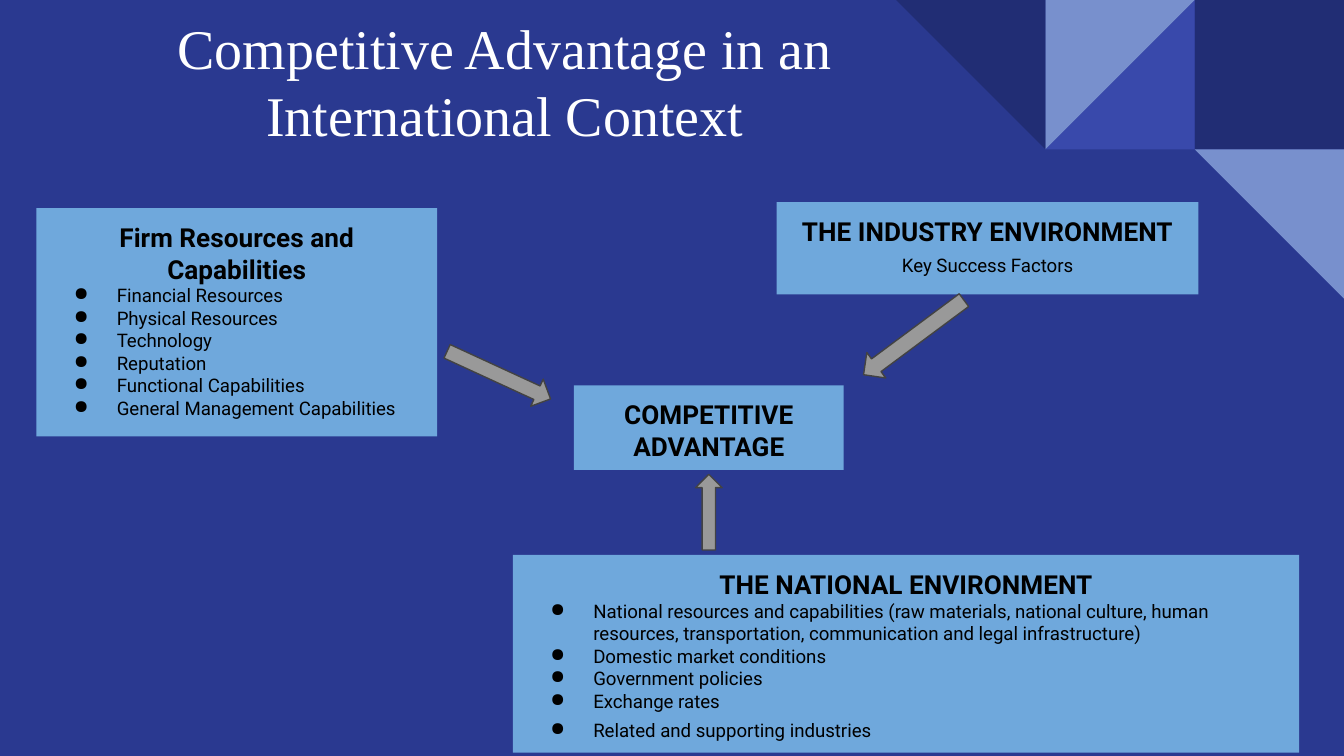
from pptx import Presentation
from pptx.dml.color import RGBColor
from pptx.enum.shapes import MSO_SHAPE as SHAPE
from pptx.enum.text import MSO_ANCHOR as ANCHOR, PP_ALIGN as ALIGN
from pptx.oxml.ns import qn
from pptx.util import Pt
from lxml import etree

NAVY = RGBColor(0x2A, 0x39, 0x90)
DARK = RGBColor(0x21, 0x2D, 0x74)
INDIGO = RGBColor(0x39, 0x49, 0xAB)
PALE = RGBColor(0x78, 0x90, 0xCD)
SKY = RGBColor(0x6F, 0xA8, 0xDC)
GRAY = RGBColor(0x99, 0x99, 0x99)
CHARCOAL = RGBColor(0x43, 0x43, 0x43)
WHITE = RGBColor(0xFF, 0xFF, 0xFF)
BLACK = RGBColor(0, 0, 0)
INSET = Pt(7.2)


def add_filled(s, kind, box, color, rotation=0):
    """Add a flat preset shape without outline."""
    sp = s.shapes.add_shape(kind, *(Pt(v) for v in box))
    sp.rotation = rotation
    sp.shadow.inherit = False
    sp.fill.solid()
    sp.fill.fore_color.rgb = color
    sp.line.fill.background()
    return sp


def set_frame(tf, anchor):
    tf.word_wrap = True
    tf.vertical_anchor = anchor
    tf.margin_left = tf.margin_right = tf.margin_top = tf.margin_bottom = INSET


def write(p, text, size, color=BLACK, font="Roboto", bold=False, align=ALIGN.CENTER):
    p.text = text
    p.alignment = align
    f = p.runs[0].font
    f.size, f.name, f.bold = Pt(size), font, bold
    f.color.rgb = color


def add_bullet(p):
    pPr = p._p.get_or_add_pPr()
    pPr.set("marL", str(Pt(36)))
    pPr.set("indent", str(-Pt(23)))
    color = etree.SubElement(pPr, qn("a:buClr"))
    etree.SubElement(color, qn("a:srgbClr"), val=str(BLACK))
    etree.SubElement(pPr, qn("a:buChar"), char="●")


def add_corner(s, left, top, side):
    """Tile the corner: column, row, shape, rotation, colour."""
    tiles = [
        (2, 0, SHAPE.RECTANGLE, 0, DARK),
        (1, 0, SHAPE.RIGHT_TRIANGLE, 270, INDIGO),
        (1, 0, SHAPE.RIGHT_TRIANGLE, 90, PALE),
        (0, 0, SHAPE.RIGHT_TRIANGLE, 180, DARK),
        (2, 1, SHAPE.RIGHT_TRIANGLE, 180, PALE),
    ]
    for col, row, kind, rotation, color in tiles:
        box = (left + col * side, top + row * side, side, side)
        add_filled(s, kind, box, color, rotation)


def add_title(s, box, text):
    tf = s.shapes.add_textbox(*(Pt(v) for v in box)).text_frame
    set_frame(tf, ANCHOR.MIDDLE)
    write(tf.paragraphs[0], text, 30, WHITE, "Times New Roman")


def add_panel(s, box, heading, lines=(), bulleted=True, last_gap=0):
    """Add a box with a bold heading and smaller lines under it."""
    tf = add_filled(s, SHAPE.RECTANGLE, box, SKY).text_frame
    set_frame(tf, ANCHOR.TOP)
    p = tf.paragraphs[0]
    write(p, heading, 14, bold=True)
    for line in lines:
        p = tf.add_paragraph()
        write(p, line, 10, align=ALIGN.LEFT if bulleted else ALIGN.CENTER)
        if line == lines[-1] and last_gap:
            p.space_before = Pt(last_gap)
        if bulleted:
            add_bullet(p)


def add_arrow(s, box, rotation):
    sp = add_filled(s, SHAPE.RIGHT_ARROW, box, GRAY, rotation)
    sp.line.color.rgb = CHARCOAL
    sp.line.width = Pt(0.75)


def main():
    prs = Presentation()
    prs.slide_width, prs.slide_height = Pt(720), Pt(405)
    s = prs.slides.add_slide(prs.slide_layouts[6])
    s.background.fill.solid()
    s.background.fill.fore_color.rgb = NAVY

    # Corner pattern and title
    add_corner(s, 480, 0, 80)
    add_title(s, (19.5, 0, 502, 86.5),
              "Competitive Advantage in an International Context")

    # Sources of advantage around the central box
    add_panel(s, (19.5, 111.5, 214.75, 122.25), "Firm Resources and Capabilities", [
        "Financial Resources",
        "Physical Resources",
        "Technology",
        "Reputation",
        "Functional Capabilities",
        "General Management Capabilities",
    ])
    add_panel(s, (307.5, 206.5, 144.5, 45.25), "COMPETITIVE ADVANTAGE")
    add_panel(s, (416, 108.25, 226, 49.5), "THE INDUSTRY ENVIRONMENT",
              ["Key Success Factors"], bulleted=False, last_gap=4)
    add_panel(s, (274.75, 297.25, 421.25, 106), "THE NATIONAL ENVIRONMENT", [
        "National resources and capabilities (raw materials, national culture, "
        "human resources, transportation, communication and legal infrastructure)",
        "Domestic market conditions",
        "Government policies",
        "Exchange rates",
        "Related and supporting industries",
    ], last_gap=4)

    # Arrows pointing to the central box
    add_arrow(s, (456, 172.25, 67, 17), 143.4)
    add_arrow(s, (236.75, 193, 61, 16), 24.7)
    add_arrow(s, (359.5, 267.25, 40.5, 14.25), 270)

    prs.save("out.pptx")


if __name__ == "__main__":
    main()
